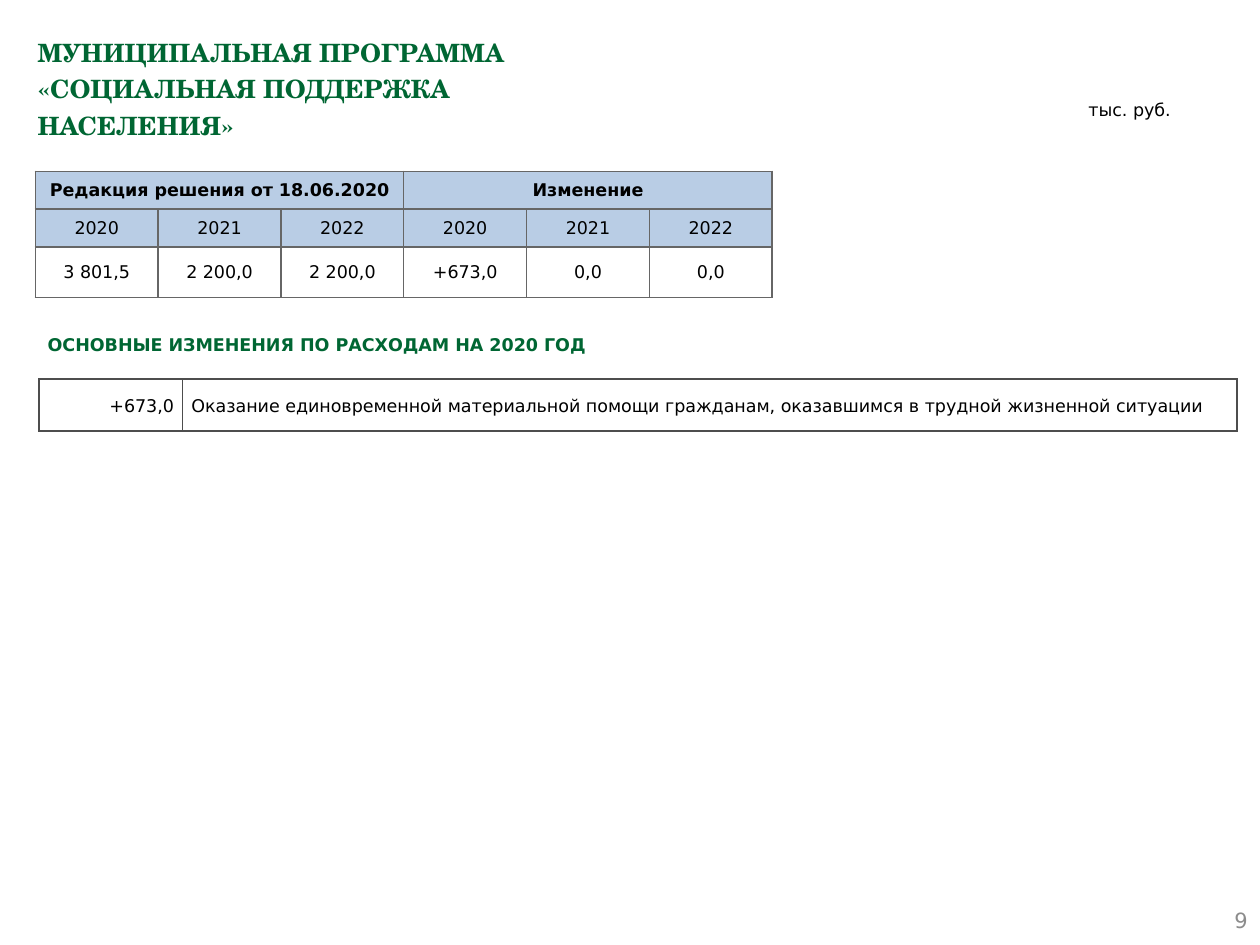
from lxml import etree
from pptx import Presentation
from pptx.dml.color import RGBColor
from pptx.enum import shapes, text
from pptx.oxml import ns
from pptx.util import Inches, Pt

GREEN = RGBColor(0x00, 0x66, 0x33)
BLACK = RGBColor(0x00, 0x00, 0x00)
PAGE_GRAY = RGBColor(0x8C, 0x8C, 0x8C)
HEADER_BLUE = RGBColor(0xB9, 0xCD, 0xE5)
BUDGET_BORDER = RGBColor(0x66, 0x66, 0x66)
CHANGES_BORDER = RGBColor(0x4D, 0x4D, 0x4D)

LEFT, CENTER, RIGHT = text.PP_ALIGN.LEFT, text.PP_ALIGN.CENTER, text.PP_ALIGN.RIGHT
TOP, MIDDLE = text.MSO_ANCHOR.TOP, text.MSO_ANCHOR.MIDDLE

BUDGET_ROWS = [
    ["Редакция решения от 18.06.2020", "", "", "Изменение", "", ""],
    ["2020", "2021", "2022"] * 2,
    ["3 801,5", "2 200,0", "2 200,0", "+673,0", "0,0", "0,0"],
]
CHANGES = [
    ["+673,0", "Оказание единовременной материальной помощи гражданам, "
               "оказавшимся в трудной жизненной ситуации"],
]


def write_text(frame, content, size=10, font="DejaVu Sans", color=BLACK, bold=False,
               align=LEFT, line_spacing=None, space_after=None):
    paragraph = frame.paragraphs[0]
    paragraph.text = content
    paragraph.alignment = align
    paragraph.line_spacing = line_spacing
    paragraph.space_after = space_after
    for run in paragraph.runs:
        run.font.size = Pt(size)
        run.font.name = font
        run.font.bold = bold
        run.font.color.rgb = color


def add_label(slide, box, content, anchor=TOP, **text_format):
    shape = slide.shapes.add_textbox(*map(Inches, box))
    shape.text_frame.word_wrap = True
    shape.text_frame.vertical_anchor = anchor
    write_text(shape.text_frame, content, **text_format)


def add_section_heading(slide, box, content):
    shape = slide.shapes.add_shape(shapes.MSO_SHAPE.PENTAGON, *map(Inches, box))
    shape.adjustments[0] = 0
    shape.shadow.inherit = False
    shape.fill.background()
    shape.line.fill.background()
    shape.text_frame.word_wrap = True
    shape.text_frame.vertical_anchor = MIDDLE
    write_text(shape.text_frame, content, color=GREEN, bold=True)


def set_borders(cell, color):
    properties = cell._tc.get_or_add_tcPr()
    for index, side in enumerate(("lnL", "lnR", "lnT", "lnB")):
        line = etree.Element(ns.qn(f"a:{side}"), w=str(Pt(1)))
        fill = etree.SubElement(line, ns.qn("a:solidFill"))
        etree.SubElement(fill, ns.qn("a:srgbClr"), val=str(color))
        properties.insert(index, line)


def add_grid(slide, left, top, widths, heights, border):
    table = slide.shapes.add_table(
        len(heights), len(widths), Inches(left), Inches(top),
        Inches(sum(widths)), Inches(sum(heights))).table
    table.first_row = table.horz_banding = False
    for column, width in zip(table.columns, widths):
        column.width = Inches(width)
    for row, height in zip(table.rows, heights):
        row.height = Inches(height)
    for cell in table.iter_cells():
        cell.fill.background()
        cell.vertical_anchor = MIDDLE
        set_borders(cell, border)
    return table


def set_margins(cell, horizontal, vertical):
    cell.margin_left = cell.margin_right = Inches(horizontal)
    cell.margin_top = cell.margin_bottom = Inches(vertical)


def add_budget_table(slide):
    table = add_grid(slide, 0.28, 1.36, [0.975] * 6, [0.3, 0.3, 0.4], BUDGET_BORDER)
    for first in (0, 3):
        table.cell(0, first).merge(table.cell(0, first + 2))
    for row, values in enumerate(BUDGET_ROWS):
        for column, value in enumerate(values):
            cell = table.cell(row, column)
            set_margins(cell, 0.05, 0.05)
            if row < 2:
                cell.fill.solid()
                cell.fill.fore_color.rgb = HEADER_BLUE
            write_text(cell.text_frame, value, bold=row == 0, align=CENTER)


def add_changes_table(slide):
    table = add_grid(slide, 0.31, 3.01, [1.14, 8.37], [0.41] * len(CHANGES), CHANGES_BORDER)
    for row, values in enumerate(CHANGES):
        for column, (value, align) in enumerate(zip(values, (RIGHT, LEFT))):
            cell = table.cell(row, column)
            set_margins(cell, 0.07, 0)
            write_text(cell.text_frame, value, align=align,
                       line_spacing=1.15, space_after=Pt(10))


def main():
    presentation = Presentation()
    presentation.slide_width, presentation.slide_height = Inches(10), Inches(7.5)
    slide = presentation.slides.add_slide(presentation.slide_layouts[6])
    add_label(slide, (0.2, 0.2, 9.61, 0.79),
              "МУНИЦИПАЛЬНАЯ ПРОГРАММА\n«СОЦИАЛЬНАЯ ПОДДЕРЖКА\nНАСЕЛЕНИЯ»",
              size=14.4, font="TeX Gyre Schola", color=GREEN, bold=True, line_spacing=1.2)
    add_label(slide, (7.67, 7.1, 2.33, 0.4), "9", anchor=MIDDLE,
              size=12, color=PAGE_GRAY, align=RIGHT)
    add_section_heading(slide, (0.28, 2.47, 5.22, 0.52),
                        "ОСНОВНЫЕ ИЗМЕНЕНИЯ ПО РАСХОДАМ НА 2020 ГОД")
    add_changes_table(slide)
    add_label(slide, (8.54, 0.7, 1.01, 0.3), "тыс. руб.", line_spacing=1.2)
    add_budget_table(slide)
    presentation.save("out.pptx")


if __name__ == "__main__":
    main()
